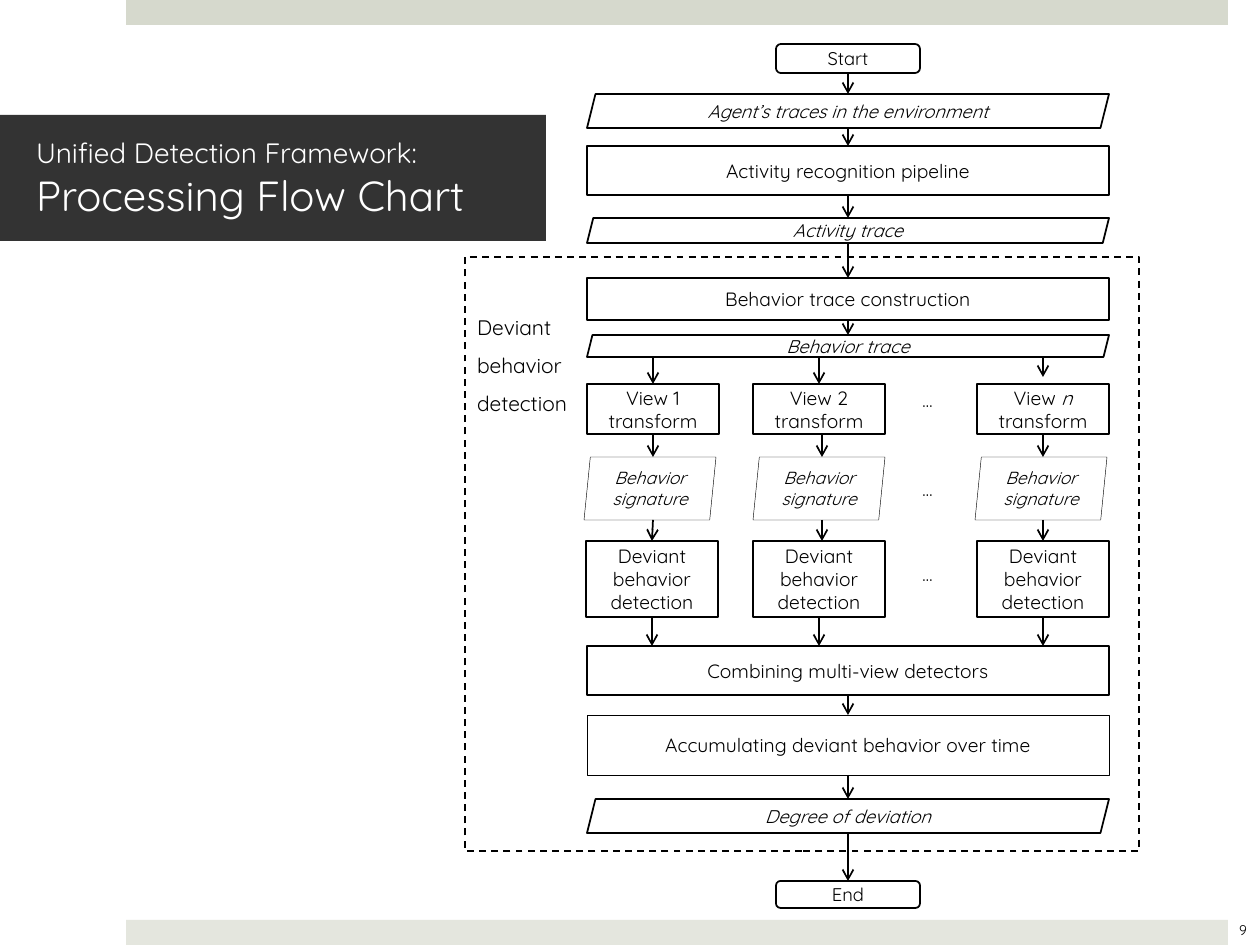
from dataclasses import dataclass
from typing import Any, Optional

from lxml import etree
from pptx import Presentation
from pptx.dml.color import RGBColor
from pptx.enum.dml import MSO_LINE
from pptx.enum.shapes import MSO_CONNECTOR, MSO_SHAPE
from pptx.enum.text import MSO_ANCHOR, MSO_AUTO_SIZE, PP_ALIGN
from pptx.oxml.ns import qn
from pptx.util import Emu, Pt

RECTANGLE = MSO_SHAPE.RECTANGLE
ROUNDED = MSO_SHAPE.ROUNDED_RECTANGLE
DATA = MSO_SHAPE.PARALLELOGRAM
STRAIGHT = MSO_CONNECTOR.STRAIGHT
DASH = MSO_LINE.DASH
MIDDLE, TOP = MSO_ANCHOR.MIDDLE, MSO_ANCHOR.TOP
CENTER, LEFT = PP_ALIGN.CENTER, PP_ALIGN.LEFT
NO_AUTOSIZE = MSO_AUTO_SIZE.NONE
SITE_TOP, SITE_BOTTOM = 0, 2
PX_PER_INCH = 126
TITLE_ONLY = 5


@dataclass(frozen=True)
class Theme:
    font: str = "Quicksand"
    ink: str = "000000"
    paper: str = "FFFFFF"
    title_fill: str = "333333"
    top_bar: str = "D6D9CD"
    bottom_bar: str = "E4E6DE"
    title: float = 24
    kicker: float = 16
    label: float = 12
    process: float = 11
    data: float = 10.5
    signature: float = 10
    page: float = 8
    line: float = 1
    hairline: float = 0.25


THEME = Theme()


@dataclass(frozen=True)
class Box:
    left: int
    top: int
    width: int
    height: int

    @property
    def center(self) -> int:
        return self.left + self.width // 2

    @property
    def bottom(self) -> int:
        return self.top + self.height


@dataclass(frozen=True)
class Run:
    text: str
    size: float
    italic: bool = False
    color: str = THEME.ink


@dataclass(frozen=True)
class Step:
    kind: Any
    text: str
    box: Box
    line: float = THEME.line


@dataclass(frozen=True)
class Column:
    view: list[list[Run]]
    left: int
    signature_left: int
    detector_left: int
    data_x: int
    first_tip: int


def px(value: int) -> Emu:
    return Emu(round(value * 914400 / PX_PER_INCH))


def place(box: Box) -> tuple[Emu, Emu, Emu, Emu]:
    return px(box.left), px(box.top), px(box.width), px(box.height)


def apply(target: Any, values: dict[str, Any]) -> None:
    for name, value in values.items():
        setattr(target, name, value)


def add_run(paragraph: Any, run: Run) -> None:
    piece = paragraph.add_run()
    piece.text = run.text
    apply(piece.font, {"name": THEME.font, "size": Pt(run.size), "italic": run.italic})
    piece.font.color.rgb = RGBColor.from_string(run.color)


def write(shape: Any, paragraphs: list[list[Run]], alignment: Any = CENTER,
          anchor: Any = MIDDLE, side: int = 12, top: int = 0, spacing: float = 1.0) -> None:
    frame = shape.text_frame
    apply(frame, {"word_wrap": True, "auto_size": NO_AUTOSIZE, "vertical_anchor": anchor,
                  "margin_left": px(side), "margin_right": px(side),
                  "margin_top": px(top), "margin_bottom": 0})
    for index, runs in enumerate(paragraphs):
        paragraph = frame.add_paragraph() if index else frame.paragraphs[0]
        apply(paragraph, {"alignment": alignment, "line_spacing": spacing})
        for run in runs:
            add_run(paragraph, run)


def draw_shape(slide: Any, kind: Any, box: Box, fill: Optional[str] = None,
               line: float = 0) -> Any:
    shape = slide.shapes.add_shape(kind, *place(box))
    shape.shadow.inherit = False
    if fill:
        shape.fill.solid()
        shape.fill.fore_color.rgb = RGBColor.from_string(fill)
    else:
        shape.fill.background()
    if line:
        shape.line.width = Pt(line)
        shape.line.color.rgb = RGBColor.from_string(THEME.ink)
    else:
        shape.line.fill.background()
    return shape


def draw_text(slide: Any, box: Box, run: Run) -> None:
    write(slide.shapes.add_textbox(*place(box)), [[run]], side=0)


def draw_arrow(slide: Any, x: int, top: int, bottom: int,
               source: Any = None, target: Any = None) -> None:
    arrow = slide.shapes.add_connector(STRAIGHT, px(x), px(top), px(x), px(bottom))
    if source is not None:
        arrow.begin_connect(source, SITE_BOTTOM)
    if target is not None:
        arrow.end_connect(target, SITE_TOP)
    arrow.line.width = Pt(THEME.line)
    arrow.line.color.rgb = RGBColor.from_string(THEME.ink)
    etree.SubElement(arrow.line._get_or_add_ln(), qn("a:tailEnd"), type="arrow")
    etree.SubElement(arrow._element.spPr, qn("a:effectLst"))


def draw_title(slide: Any) -> None:
    title = slide.shapes.title
    left, top, width, height = place(Box(0, 115, 546, 126))
    apply(title, {"left": left, "top": top, "width": width, "height": height})
    title.fill.solid()
    title.fill.fore_color.rgb = RGBColor.from_string(THEME.title_fill)
    write(title, [[Run("Unified Detection Framework:", THEME.kicker, color=THEME.paper)]],
          alignment=LEFT, side=36)
    paragraph = title.text_frame.paragraphs[0]
    paragraph.add_line_break()
    add_run(paragraph, Run("Processing Flow Chart", THEME.title, color=THEME.paper))


def draw_chain(slide: Any, steps: list[Step]) -> None:
    previous, previous_shape = None, None
    for step in steps:
        shape = draw_shape(slide, step.kind, step.box, line=step.line)
        size = THEME.process if step.kind == RECTANGLE else THEME.data
        write(shape, [[Run(step.text, size, step.kind == DATA)]])
        glued = None if step.kind == DATA else shape
        if previous:
            draw_arrow(slide, step.box.center, previous.box.bottom, step.box.top,
                       previous_shape, glued)
        previous, previous_shape = step, glued


def draw_column(slide: Any, column: Column) -> None:
    view_box = Box(column.left, 384, 132, 50)
    view = draw_shape(slide, RECTANGLE, view_box, line=THEME.line)
    write(view, column.view)
    signature_box = Box(column.signature_left, 457, 132, 63)
    signature = draw_shape(slide, DATA, signature_box, THEME.paper, THEME.hairline)
    signature.adjustments[0] = 0.1
    write(signature, [[Run("Behavior signature", THEME.signature, True)]])
    detector_box = Box(column.detector_left, 541, 132, 76)
    detector = draw_shape(slide, RECTANGLE, detector_box, line=THEME.line)
    write(detector, [[Run("Deviant behavior detection", THEME.process)]])

    aligned = column.data_x == view_box.center
    draw_arrow(slide, view_box.center, 357, column.first_tip,
               target=view if column.first_tip == view_box.top else None)
    draw_arrow(slide, column.data_x, view_box.bottom, signature_box.top,
               source=view if aligned else None)
    draw_arrow(slide, column.data_x, signature_box.bottom, detector_box.top,
               target=detector if aligned else None)
    draw_arrow(slide, detector_box.center, detector_box.bottom, 646, source=detector)


def wide(top: int, height: int) -> Box:
    return Box(587, top, 522, height)


STEPS_IN = [
    Step(ROUNDED, "Start", Box(776, 44, 144, 29)),
    Step(DATA, "Agent’s traces in the environment", wide(94, 34)),
    Step(RECTANGLE, "Activity recognition pipeline", wide(146, 49)),
    Step(DATA, "Activity trace", wide(218, 25)),
    Step(RECTANGLE, "Behavior trace construction", wide(278, 42)),
    Step(DATA, "Behavior trace", wide(335, 22)),
]
STEPS_OUT = [
    Step(RECTANGLE, "Combining multi-view detectors", wide(646, 49)),
    Step(RECTANGLE, "Accumulating deviant behavior over time", wide(715, 60), THEME.hairline),
    Step(DATA, "Degree of deviation", wide(799, 34)),
    Step(ROUNDED, "End", Box(776, 881, 144, 27)),
]
VIEW_N = [[Run("View ", THEME.process), Run("n ", THEME.process, True),
           Run("transform", THEME.process)]]


def numbered_view(number: int) -> list[list[Run]]:
    return [[Run(text, THEME.process)] for text in (f"View {number}", "transform")]


COLUMNS = [
    Column(numbered_view(1), 587, 584, 586, 653, 384),
    Column(numbered_view(2), 753, 753, 753, 822, 384),
    Column(VIEW_N, 977, 975, 977, 1043, 377),
]


def main() -> None:
    presentation = Presentation()
    apply(presentation, {"slide_width": px(1260), "slide_height": px(945)})
    slide = presentation.slides.add_slide(presentation.slide_layouts[TITLE_ONLY])
    for top, color in ((0, THEME.top_bar), (920, THEME.bottom_bar)):
        draw_shape(slide, RECTANGLE, Box(126, top, 1102, 25), color)
    draw_title(slide)
    stage = draw_shape(slide, RECTANGLE, Box(465, 257, 674, 594), line=THEME.line)
    stage.line.dash_style = DASH
    write(stage, [[Run(word, THEME.label)] for word in ("Deviant", "behavior", "detection")],
          alignment=LEFT, anchor=TOP, top=45, spacing=1.5)
    for steps in (STEPS_IN, STEPS_OUT):
        draw_chain(slide, steps)
    for column in COLUMNS:
        draw_column(slide, column)
    for top in (391, 480, 565):
        draw_text(slide, Box(905, top, 45, 18), Run("…", THEME.data))
    draw_text(slide, Box(1226, 905, 34, 50), Run("9", THEME.page))
    presentation.save("out.pptx")


if __name__ == "__main__":
    main()
